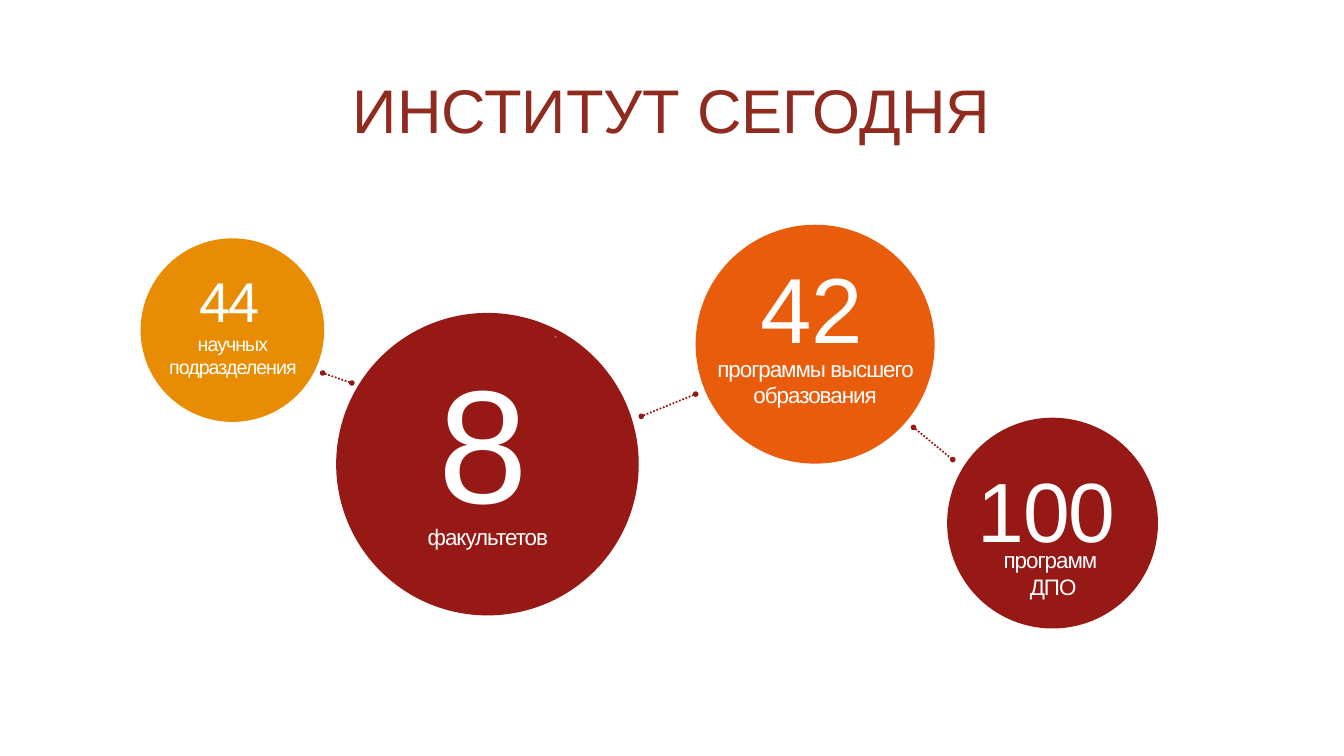
"""Build a slide of institute figures shown as linked circles."""
from lxml.etree import SubElement
from pptx import Presentation
from pptx.dml.color import RGBColor
from pptx.enum.dml import MSO_LINE
from pptx.enum.shapes import MSO_CONNECTOR, MSO_SHAPE
from pptx.enum.text import MSO_ANCHOR, MSO_AUTO_SIZE, PP_ALIGN
from pptx.oxml.ns import qn
from pptx.util import Inches, Pt

COLORS = {"title": "902B20", "red": "961916", "amber": "E88D03",
          "orange": "E95C0C", "white": "FFFFFF", "speck": "F6F8F8"}
TITLE = "ИНСТИТУТ СЕГОДНЯ"
FACTS = [
    {"circle": (3.35, 3.12, 2.97), "color": "red", "outlined": True,
     "texts": [(["8"], (3.61, 3.35, 2.37, 2.04), 115, -1.8, 1.0),
               (["факультетов"], (3.81, 5.19, 2.06, 0.32), 16, -0.7, 0.8)]},
    {"circle": (9.41, 4.16, 2.06), "color": "red", "outlined": True,
     "texts": [(["100"], (8.95, 4.5, 2.86, 1.11), 60, -1.1, 1.0),
               (["программ ", "ДПО"], (9.07, 5.37, 2.75, 0.64), 16, -0.7, 1.0)]},
    {"circle": (1.41, 2.38, 1.79), "color": "amber", "outlined": True,
     "texts": [(["44"], (1.09, 2.59, 2.37, 0.77), 40, -1.1, 1.0),
               (["научных", "подразделения"], (1.3, 3.24, 2.02, 0.57), 14, -0.7, 1.0)]},
    {"circle": (6.9, 2.23, 2.37), "color": "orange", "outlined": False,
     "texts": [(["42"], (6.62, 2.44, 2.86, 1.21), 66, 0, 1.0),
               (["программы высшего образования"], (6.71, 3.47, 2.75, 0.64), 16, -0.7, 1.0)]},
]
LINKS = [(3.2, 3.7, 3.49, 3.8), (6.36, 4.13, 6.9, 3.91), (9.06, 4.24, 9.45, 4.56)]
SPECKS = [(5.5, 3.33), (5.51, 3.34)]
SPECK_SIZE = 0.01


def color(name):
    return RGBColor.from_string(COLORS[name])


def apply(target, formats):
    for name, value in formats.items():
        setattr(target, name, value)


def write(frame, lines, size, tint, spacing, leading):
    for number, line in enumerate(lines):
        para = frame.add_paragraph() if number else frame.paragraphs[0]
        apply(para, {"alignment": PP_ALIGN.CENTER, "line_spacing": leading})
        span = para.add_run()
        span.text = line
        apply(span.font, {"name": "Arial", "size": Pt(size)})
        span.font.color.rgb = color(tint)
        if spacing:
            span.font._element.set("spc", str(round(spacing * 100)))


def add_title(page):
    box = page.shapes.title
    apply(box, {"left": Inches(1), "top": Inches(0.68),
                "width": Inches(11.33), "height": Inches(0.89)})
    apply(box.text_frame, {"margin_left": 0, "margin_right": 0, "margin_top": 0,
                           "margin_bottom": 0, "vertical_anchor": MSO_ANCHOR.MIDDLE})
    write(box.text_frame, [TITLE], 44, "title", 0, 0.9)


def paint(shape, tint):
    shape.shadow.inherit = False
    shape.fill.solid()
    shape.fill.fore_color.rgb = color(tint)
    shape.line.fill.background()


def add_fact(page, fact):
    left, top, size = map(Inches, fact["circle"])
    circle = page.shapes.add_shape(MSO_SHAPE.OVAL, left, top, size, size)
    paint(circle, fact["color"])
    if fact["outlined"]:
        circle.line.color.rgb = color(fact["color"])
        circle.line.width = Pt(2.25)
    for lines, place, points, spacing, leading in fact["texts"]:
        box = page.shapes.add_textbox(*map(Inches, place))
        apply(box.text_frame, {"word_wrap": True,
                               "auto_size": MSO_AUTO_SIZE.SHAPE_TO_FIT_TEXT})
        write(box.text_frame, lines, points, "white", spacing, leading)


def add_speck(page, left, top):
    half = SPECK_SIZE / 2
    corners = [(left + SPECK_SIZE, top + half), (left + half, top + SPECK_SIZE),
               (left, top + half)]
    outline = page.shapes.build_freeform(Inches(left + half), Inches(top))
    outline.add_line_segments([(Inches(x), Inches(y)) for x, y in corners], close=True)
    paint(outline.convert_to_shape(), "speck")


def add_link(page, ends):
    link = page.shapes.add_connector(MSO_CONNECTOR.STRAIGHT, *map(Inches, ends))
    link.line.color.rgb = color("red")
    apply(link.line, {"width": Pt(1.25), "dash_style": MSO_LINE.ROUND_DOT})
    outline = link.line._get_or_add_ln()
    for tag in ("a:headEnd", "a:tailEnd"):
        SubElement(outline, qn(tag), type="oval", w="sm", len="sm")
    SubElement(link._element.spPr, qn("a:effectLst"))


def main():
    deck = Presentation()
    apply(deck, {"slide_width": Inches(13.33), "slide_height": Inches(7.5)})
    page = deck.slides.add_slide(deck.slide_layouts[5])
    add_title(page)
    for fact in FACTS:
        add_fact(page, fact)
    for speck in SPECKS:
        add_speck(page, *speck)
    for ends in LINKS:
        add_link(page, ends)
    deck.save("out.pptx")


if __name__ == "__main__":
    main()
